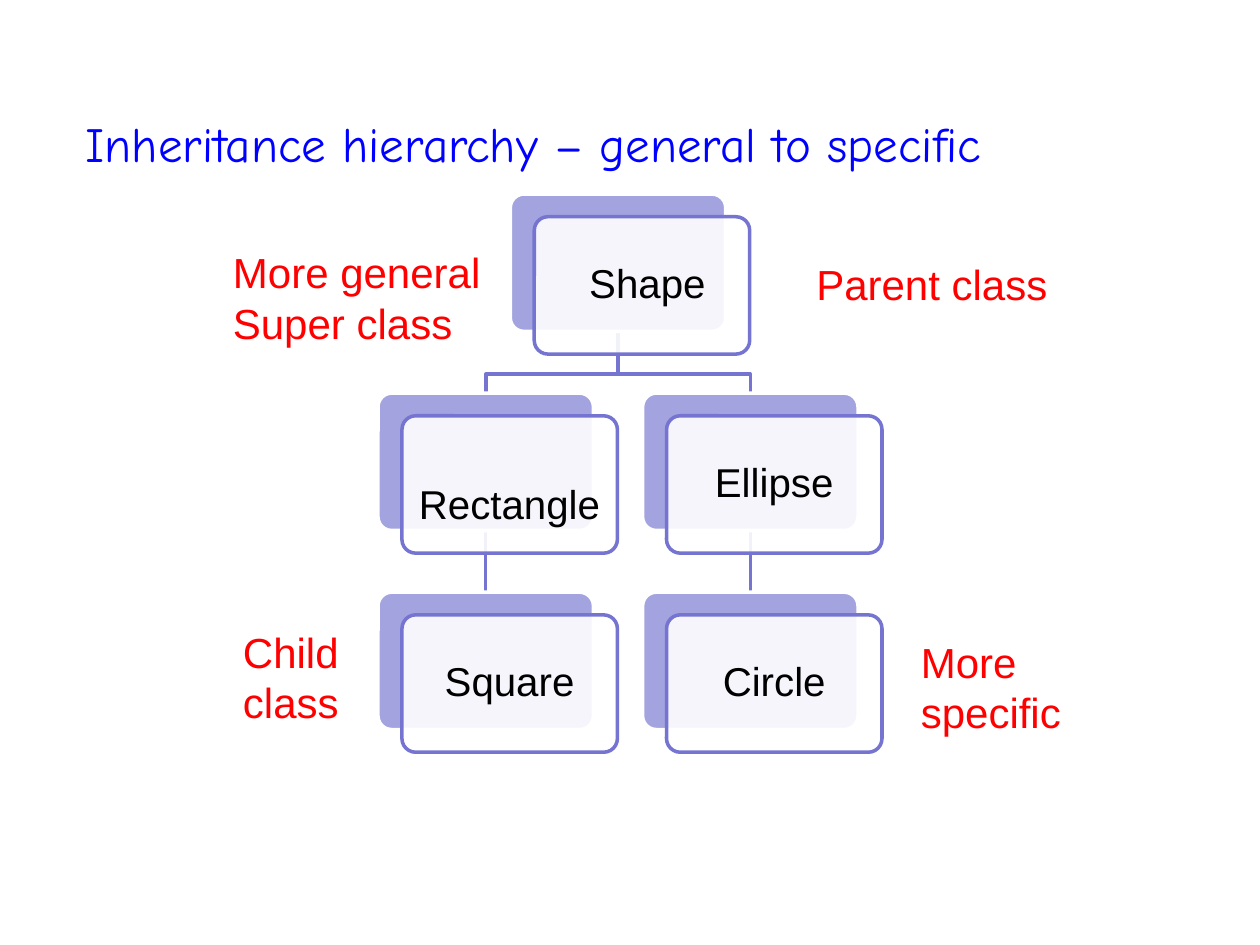
from pptx import Presentation
from pptx.dml.color import RGBColor
from pptx.enum.shapes import MSO_CONNECTOR, MSO_SHAPE
from pptx.enum.text import MSO_ANCHOR, MSO_AUTO_SIZE, PP_ALIGN
from pptx.util import Inches, Pt
from lxml.etree import SubElement

COLORS = {
    "title": "0000FF",
    "label": "FF0000",
    "text": "000000",
    "edge": "7575D1",
    "back": "A3A3E0",
    "white": "FFFFFF",
}
WIDE, HIGH = 1.71, 1.09
SHIFT_X, SHIFT_Y = 0.19, 0.18
LEFT, TOP = 3, 1.54
STEP_X, STEP_Y = 2.1, 1.58
BEND = 0.34

NODES = {
    "Shape": (" Shape", 0.5, 0),
    "Rectangle": (" Rectangle", 0, 1),
    "Square": ("Square", 0, 2),
    "Ellipse": ("Ellipse", 1, 1),
    "Circle": ("Circle", 1, 2),
}
LINKS = [
    ("Ellipse", "Circle"),
    ("Shape", "Ellipse"),
    ("Rectangle", "Square"),
    ("Shape", "Rectangle"),
]
LABELS = [
    ("More general\nSuper class", 1.75, 1.91, 2.19, 0.91),
    ("More\nspecific", 7.21, 5, 1.33, 0.91),
    ("Parent class", 6.38, 2, 2.05, 0.5),
    ("Child\nclass", 1.83, 4.92, 0.97, 0.91),
]


def color(name):
    return RGBColor.from_string(COLORS[name])


def write(frame, text, size=24, font="Arial", ink="text",
          align=PP_ALIGN.LEFT, anchor=MSO_ANCHOR.TOP, wrap=True,
          space=None, after=None):
    frame.word_wrap = wrap
    frame.vertical_anchor = anchor
    frame.text = text
    for para in frame.paragraphs:
        para.alignment = align
        para.line_spacing = space
        para.space_after = after
        for run in para.runs:
            run.font.size = Pt(size)
            run.font.name = font
            run.font.color.rgb = color(ink)


def place(name):
    _, col, row = NODES[name]
    return LEFT + col * STEP_X, TOP + row * STEP_Y


class Board:
    def __init__(self, deck):
        self.slide = deck.slides.add_slide(deck.slide_layouts[5])
        self.shapes = self.slide.shapes
        self.width = Pt(2)

    def stroke(self, shape, ink):
        shape.line.color.rgb = color(ink)
        shape.line.width = self.width

    def title(self, text, x, y, w, h):
        head = self.shapes.title
        head.left, head.top = Inches(x), Inches(y)
        head.width, head.height = Inches(w), Inches(h)
        write(head.text_frame, text, size=28, font="Comic Neue",
              ink="title", anchor=MSO_ANCHOR.BOTTOM)
        head.text_frame.auto_size = MSO_AUTO_SIZE.NONE

    def label(self, text, x, y, w, h):
        box = self.shapes.add_textbox(
            Inches(x), Inches(y), Inches(w), Inches(h))
        write(box.text_frame, text, ink="label", wrap=False)
        box.text_frame.auto_size = MSO_AUTO_SIZE.SHAPE_TO_FIT_TEXT

    def panel(self, x, y, fill, edge):
        box = self.shapes.add_shape(
            MSO_SHAPE.ROUNDED_RECTANGLE,
            Inches(x), Inches(y), Inches(WIDE), Inches(HIGH))
        box.adjustments[0] = 0.1
        box.shadow.inherit = False
        box.fill.solid()
        box.fill.fore_color.rgb = color(fill)
        self.stroke(box, edge)
        return box

    def card(self, text, x, y):
        back = self.panel(x, y, "back", "white")
        front = self.panel(x + SHIFT_X, y + SHIFT_Y, "white", "edge")
        tint = front.fill._xPr.solidFill.srgbClr
        SubElement(tint, tint.tag.replace("srgbClr", "alpha"), val="90000")
        frame = front.text_frame
        frame.margin_left = frame.margin_right = Inches(0.09)
        frame.margin_top = frame.margin_bottom = Inches(0.1)
        write(frame, text, size=23, align=PP_ALIGN.CENTER,
              anchor=MSO_ANCHOR.MIDDLE, space=0.9, after=Pt(8))
        return back

    def line(self, x1, y1, x2, y2):
        link = self.shapes.add_connector(
            MSO_CONNECTOR.STRAIGHT,
            Inches(x1), Inches(y1), Inches(x2), Inches(y2))
        self.stroke(link, "edge")
        props = link._element.spPr
        SubElement(props, props.ln.tag.replace("}ln", "}effectLst"))
        return link

    def elbow(self, x1, y1, x2, y2):
        mid = y1 + BEND
        pen = self.shapes.build_freeform(Inches(x1), Inches(y1))
        pen.add_line_segments(
            [(Inches(x), Inches(y))
             for x, y in ((x1, mid), (x2, mid), (x2, y2))],
            close=False)
        path = pen.convert_to_shape()
        path.shadow.inherit = False
        path.fill.background()
        self.stroke(path, "edge")


def main():
    deck = Presentation()
    deck.slide_width, deck.slide_height = Inches(10), Inches(7.5)
    board = Board(deck)
    board.title("Inheritance hierarchy – general to specific",
                0.58, 0.33, 9.08, 1.09)

    joins = []
    for upper, lower in LINKS:
        (x1, y1), (x2, y2) = place(upper), place(lower)
        ends = x1 + WIDE / 2, y1 + HIGH, x2 + WIDE / 2, y2
        if x1 == x2:
            joins.append((board.line(*ends), upper, lower))
        else:
            board.elbow(*ends)

    cards = {name: board.card(node[0], *place(name))
             for name, node in NODES.items()}
    for link, upper, lower in joins:
        link.begin_connect(cards[upper], 2)
        link.end_connect(cards[lower], 0)

    for item in LABELS:
        board.label(*item)
    deck.save("out.pptx")


if __name__ == "__main__":
    main()
